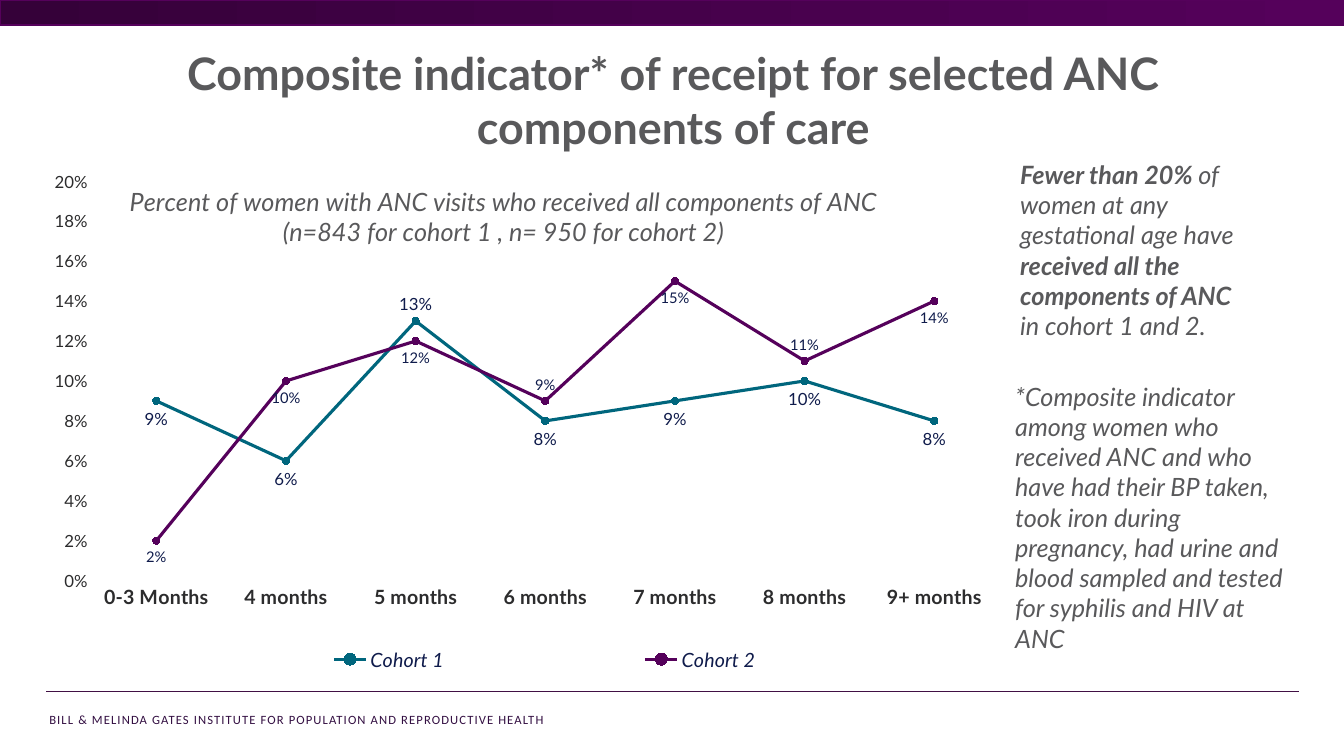
from pptx import Presentation
from pptx.chart.data import CategoryChartData
from pptx.dml.color import RGBColor
from pptx.enum.chart import (XL_CHART_TYPE, XL_LABEL_POSITION, XL_LEGEND_POSITION,
                             XL_MARKER_STYLE, XL_TICK_MARK)
from pptx.enum.shapes import MSO_SHAPE
from pptx.enum.text import MSO_ANCHOR, MSO_AUTO_SIZE, PP_ALIGN
from pptx.oxml import parse_xml
from pptx.oxml.ns import nsdecls, qn
from pptx.util import Inches, Pt


class Theme:
    grey, dark, navy = "59595B", "2C2C2D", "0F1B4B"
    teal, purple, deep_purple = "00667D", "55015B", "350139"
    rule, footer = "411044", "330F42"
    body_font, footer_font = "Lato", "Calibri"
    title_size, text_size, axis_size = 32, 18, 14
    label_size, small_label_size, footer_size = 12, 10.5, 9


def set_font(font, size, color, **options):
    values = {"name": Theme.body_font, "size": Pt(size), "bold": False, "italic": False}
    values.update(options)
    for name, value in values.items():
        setattr(font, name, value)
    font.color.rgb = RGBColor.from_string(color)


def set_layout(element, index, x, y, width=None, height=None, inner=False):
    """Place a chart part by fractions of the chart area."""
    for old in element.findall(qn("c:layout")):
        element.remove(old)
    fields = [("layoutTarget", "inner")] if inner else []
    fields += [("xMode", "edge"), ("yMode", "edge"), ("x", x), ("y", y)]
    if width is not None:
        fields += [("w", width), ("h", height)]
    body = "".join(f'<c:{tag} val="{value}"/>' for tag, value in fields)
    element.insert(index, parse_xml(
        f'<c:layout {nsdecls("c")}><c:manualLayout>{body}</c:manualLayout></c:layout>'))


class SlideBuilder:
    def __init__(self, presentation):
        self.slide = presentation.slides.add_slide(presentation.slide_layouts[5])
        self.shapes = self.slide.shapes

    def band(self, left, top, width, height):
        shape = self.shapes.add_shape(MSO_SHAPE.RECTANGLE, *map(Inches, (left, top, width, height)))
        shape.shadow.inherit = False
        shape.fill.gradient()
        shape.fill.gradient_angle = 0
        for stop, color in zip(shape.fill.gradient_stops, (Theme.deep_purple, Theme.purple)):
            stop.color.rgb = RGBColor.from_string(color)
        shape.line.color.rgb = RGBColor.from_string(Theme.purple)
        shape.line.width = Pt(1)

    def rule(self, left, right, top):
        line = self.shapes.add_connector(1, *map(Inches, (left, top, right, top)))
        line.line.color.rgb = RGBColor.from_string(Theme.rule)
        line.line.width = Pt(1.25)
        line._element.spPr.append(parse_xml(f'<a:effectLst {nsdecls("a")}/>'))

    def title(self, text, left, top, width, height):
        shape = self.shapes.title
        for name, value in zip(("left", "top", "width", "height"), (left, top, width, height)):
            setattr(shape, name, Inches(value))
        frame = shape.text_frame
        frame.text = text
        frame.auto_size = MSO_AUTO_SIZE.NONE
        frame.vertical_anchor = MSO_ANCHOR.MIDDLE
        paragraph = frame.paragraphs[0]
        paragraph.alignment = PP_ALIGN.CENTER
        set_font(paragraph.runs[0].font, Theme.title_size, Theme.grey, bold=True)

    def text(self, runs, left, top, width, height, size, color, spacing=None, **options):
        """Add one paragraph from (text, bold) runs."""
        box = self.shapes.add_textbox(*map(Inches, (left, top, width, height)))
        box.text_frame.word_wrap = True
        paragraph = box.text_frame.paragraphs[0]
        for text, bold in runs:
            run = paragraph.add_run()
            run.text = text
            set_font(run.font, size, color, bold=bold, **options)
            if spacing:
                run._r.get_or_add_rPr().set("spc", str(spacing))

    def line_chart(self, title_lines, categories, cohorts, left, top, width, height):
        data = CategoryChartData(number_format="0%")
        data.categories = categories
        for cohort in cohorts:
            data.add_series(cohort["name"], cohort["values"])
        chart = self.shapes.add_chart(XL_CHART_TYPE.LINE_MARKERS,
                                      *map(Inches, (left, top, width, height)), data).chart
        set_font(chart.font, 10, Theme.grey)
        self.chart_title(chart, title_lines)
        self.chart_axes(chart)
        for series, cohort in zip(chart.plots[0].series, cohorts):
            self.chart_series(series, cohort)
        chart.has_legend = True
        legend = chart.legend
        legend.position = XL_LEGEND_POSITION.RIGHT
        legend.include_in_layout = False
        set_font(legend.font, Theme.axis_size, Theme.navy, italic=True)
        set_layout(legend._element, 1, 0.12, 0.9, 0.83, 0.08)
        plot_area = chart._chartSpace.find(qn("c:chart")).find(qn("c:plotArea"))
        set_layout(plot_area, 0, 0.071, 0.021, 0.929, 0.768, inner=True)

    def chart_title(self, chart, lines):
        chart.has_title = True
        frame = chart.chart_title.text_frame
        for number, line in enumerate(lines):
            paragraph = frame.add_paragraph() if number else frame.paragraphs[0]
            paragraph.alignment = PP_ALIGN.CENTER
            run = paragraph.add_run()
            run.text = line
            set_font(run.font, Theme.text_size, Theme.grey, italic=True)
        chart.chart_title.include_in_layout = True
        set_layout(chart.chart_title._element, 1, 0.107, 0.02)

    def chart_axes(self, chart):
        for axis, size, bold in ((chart.category_axis, Theme.axis_size, True),
                                 (chart.value_axis, Theme.label_size, False)):
            axis.major_tick_mark = axis.minor_tick_mark = XL_TICK_MARK.NONE
            axis.has_major_gridlines = False
            axis.format.line.fill.background()
            set_font(axis.tick_labels.font, size, Theme.dark, bold=bold)
        scale = {"minimum_scale": 0, "maximum_scale": 0.2, "major_unit": 0.02}
        for name, value in scale.items():
            setattr(chart.value_axis, name, value)
        chart.value_axis.tick_labels.number_format = "0%"
        chart.value_axis.tick_labels.number_format_is_linked = False

    def chart_series(self, series, cohort):
        color = RGBColor.from_string(cohort["color"])
        series.smooth = False
        series.format.line.color.rgb = color
        series.format.line.width = Pt(2.25)
        marker = series.marker
        marker.style, marker.size = XL_MARKER_STYLE.CIRCLE, 5
        marker.format.fill.solid()
        marker.format.fill.fore_color.rgb = color
        marker.format.line.color.rgb = color
        labels = series.data_labels
        values = {"show_value": True, "position": XL_LABEL_POSITION.BELOW,
                  "number_format": "0%", "number_format_is_linked": False}
        for name, value in values.items():
            setattr(labels, name, value)
        set_font(labels.font, cohort["label_size"], Theme.navy)
        for index in cohort["labels_above"]:
            label = series.points[index].data_label
            set_font(label.font, cohort["label_size"], Theme.navy)
            label.position = XL_LABEL_POSITION.ABOVE


def main():
    presentation = Presentation()
    presentation.slide_width, presentation.slide_height = Inches(13.33), Inches(7.5)
    builder = SlideBuilder(presentation)

    # Frame: footer, rule and top band
    builder.text([("BILL & MELINDA GATES INSTITUTE FOR POPULATION AND REPRODUCTIVE HEALTH", False)],
                 0.39, 7.01, 7.38, 0.25, Theme.footer_size, Theme.footer,
                 spacing=80, name=Theme.footer_font)
    builder.rule(0.46, 12.88, 6.86)
    builder.band(0, 0, 13.33, 0.25)

    # Title
    builder.title("Composite indicator* of receipt for selected ANC components of care",
                  0.76, 0.38, 11.84, 1.22)

    # Cohort chart
    cohorts = [
        {"name": "Cohort 1", "values": (0.09, 0.06, 0.13, 0.08, 0.09, 0.1, 0.08),
         "color": Theme.teal, "label_size": Theme.label_size, "labels_above": (2,)},
        {"name": "Cohort 2", "values": (0.02, 0.1, 0.12, 0.09, 0.15, 0.11, 0.14),
         "color": Theme.purple, "label_size": Theme.small_label_size, "labels_above": (3, 5)},
    ]
    months = ["0-3 Months", *(f"{month} months" for month in range(4, 9)), "9+ months"]
    builder.line_chart(["Percent of women with ANC visits who received all components of ANC",
                        "(n=843 for cohort 1 , n= 950 for cohort 2)"],
                       months, cohorts, 0.22, 1.69, 9.69, 5.16)

    # Finding and definition
    builder.text([("Fewer than 20% ", True), ("of women at any gestational age have ", False),
                  ("received all the components of ANC ", True), ("in cohort 1 and 2.", False)],
                 10.02, 1.53, 2.53, 1.92, Theme.text_size, Theme.grey, italic=True)
    builder.text([("*Composite indicator among women who received ANC and who have had their BP "
                   "taken, took iron during pregnancy, had urine and blood sampled and tested "
                   "for syphilis and HIV at ANC", False)],
                 9.97, 3.73, 2.95, 2.83, Theme.text_size, Theme.grey, italic=True)

    presentation.save("out.pptx")


if __name__ == "__main__":
    main()
